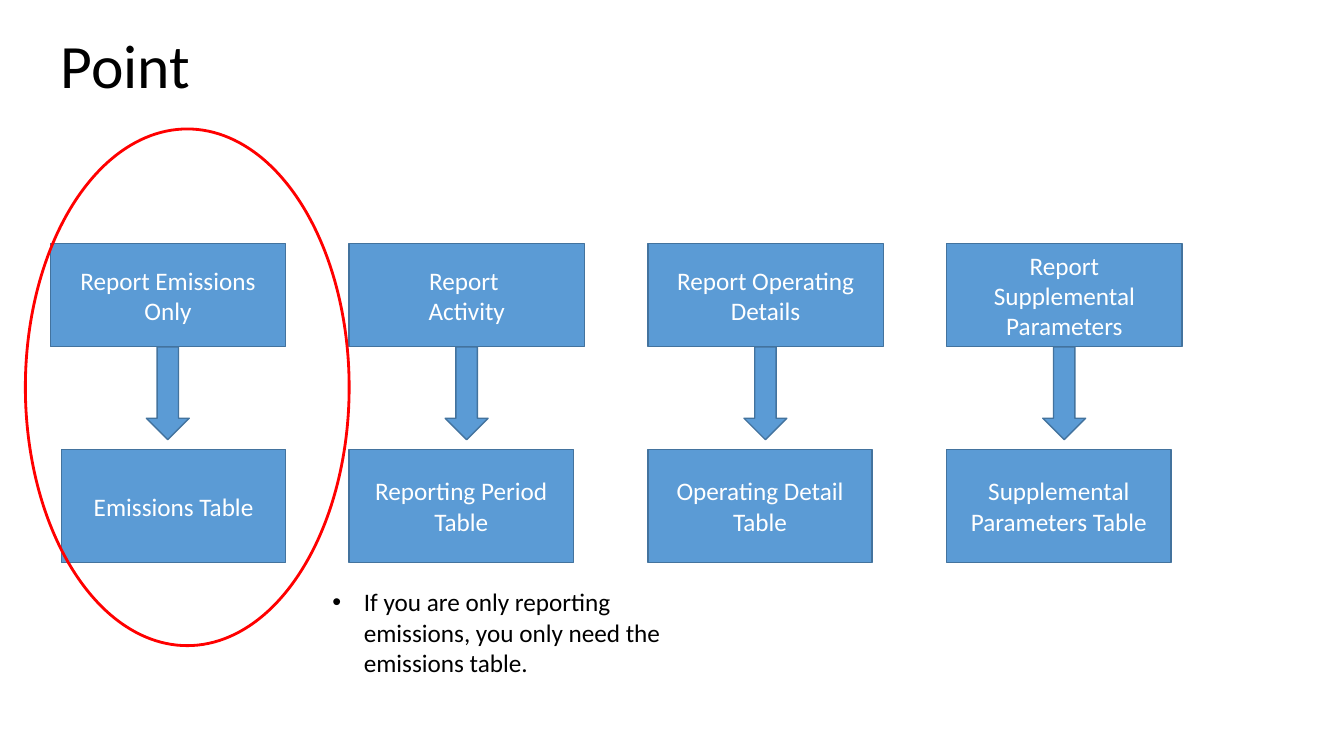
from dataclasses import dataclass

from lxml import etree
from pptx import Presentation
from pptx.dml.color import RGBColor
from pptx.enum import shapes, text
from pptx.oxml.ns import qn
from pptx.util import Cm, Pt

HUES = {"box": "5B9BD5", "edge": "43739E", "ring": "FF0000",
        "light": "FFFFFF", "dark": "000000"}
KIND = shapes.MSO_SHAPE
LEFT, STEP = 1.27, 7.53


@dataclass
class Area:
    left: float
    top: float
    width: float
    height: float

    def spots(self) -> list:
        return [Cm(v) for v in (self.left, self.top, self.width, self.height)]


@dataclass
class Flow:
    report: str
    table: str
    inset: float = 0


FLOWS = [
    Flow("Report Emissions Only", "Emissions Table", 0.28),
    Flow("Report \nActivity", "Reporting Period Table"),
    Flow("Report Operating Details", "Operating Detail Table"),
    Flow("Report Supplemental Parameters", "Supplemental Parameters Table"),
]


def hue(name: str) -> RGBColor:
    return RGBColor.from_string(HUES[name])


def write(shape, words: str, size: int, tone: str, align, anchor) -> None:
    frame = shape.text_frame
    frame.text = words
    form = {"word_wrap": True, "auto_size": text.MSO_AUTO_SIZE.NONE,
            "vertical_anchor": anchor}
    for key, value in form.items():
        setattr(frame, key, value)
    for para in frame.paragraphs:
        para.alignment = align
        for run in para.runs:
            for key, value in {"name": "Calibri", "size": Pt(size)}.items():
                setattr(run.font, key, value)
            run.font.color.rgb = hue(tone)


def draw(slide, kind, area: Area, edge: str, width: int, fill: str = ""):
    shape = slide.shapes.add_shape(kind, *area.spots())
    shape.shadow.inherit = False
    if fill:
        shape.fill.solid()
        shape.fill.fore_color.rgb = hue(fill)
    else:
        shape.fill.background()
    shape.line.color.rgb = hue(edge)
    shape.line.width = Pt(width)
    return shape


def label(slide, area: Area, words: str) -> None:
    box = draw(slide, KIND.RECTANGLE, area, "edge", 1, "box")
    write(box, words, 18, "light", text.PP_ALIGN.CENTER, text.MSO_ANCHOR.MIDDLE)


def chain(slide, flow: Flow, left: float) -> None:
    """Draw a report box, its arrow and the table box below."""
    label(slide, Area(left, 6.14, 5.93, 2.6), flow.report)
    draw(slide, KIND.DOWN_ARROW, Area(left + 2.42, 8.74, 1.08, 2.34),
         "edge", 1, "box")
    label(slide, Area(left + flow.inset, 11.32, 5.65, 2.86), flow.table)


def head(slide, words: str) -> None:
    title = slide.shapes.title
    spots = Area(LEFT, 0.76, 22.86, 3.18).spots()
    for key, value in zip(("left", "top", "width", "height"), spots):
        setattr(title, key, value)
    write(title, words, 44, "dark", text.PP_ALIGN.LEFT, text.MSO_ANCHOR.TOP)
    title.text_frame.paragraphs[0].line_spacing = 0.9


def note(slide, words: str) -> None:
    box = slide.shapes.add_textbox(*Area(8.13, 14.66, 9.75, 3.32).spots())
    write(box, words, 18, "dark", text.PP_ALIGN.LEFT, text.MSO_ANCHOR.TOP)
    props = box.text_frame.paragraphs[0]._p.get_or_add_pPr()
    indent = Cm(0.79)
    props.set("marL", str(indent))
    props.set("indent", str(-indent))
    etree.SubElement(props, qn("a:buFont")).set("typeface", "Arial")
    etree.SubElement(props, qn("a:buChar")).set("char", "•")


def main() -> None:
    deck = Presentation()
    deck.slide_width, deck.slide_height = Cm(33.87), Cm(19.05)
    slide = deck.slides.add_slide(deck.slide_layouts.get_by_name("Title Only"))
    head(slide, "Point")
    for i, flow in enumerate(FLOWS):
        chain(slide, flow, LEFT + i * STEP)
    draw(slide, KIND.OVAL, Area(0.64, 3.25, 8.16, 13.02), "ring", 2)
    note(slide, "If you are only reporting emissions, "
                "you only need the emissions table.")
    deck.save("out.pptx")


if __name__ == "__main__":
    main()
